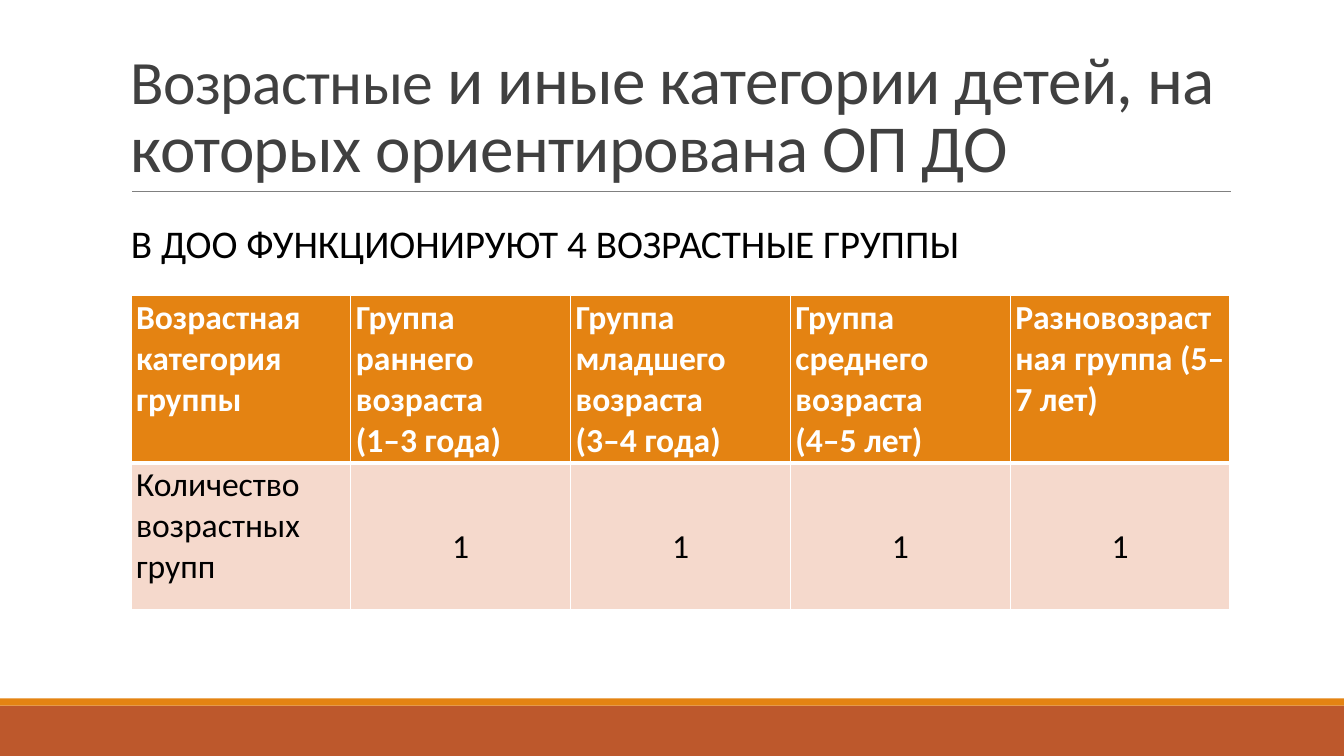
from dataclasses import dataclass

import pptx
import pptx.dml.color
import pptx.enum.shapes
import pptx.enum.text
import pptx.oxml.ns
import pptx.util
from lxml import etree

Inches = pptx.util.Inches
Pt = pptx.util.Pt
ALIGN = pptx.enum.text.PP_ALIGN
ANCHOR = pptx.enum.text.MSO_ANCHOR


@dataclass(frozen=True)
class Theme:
    font: str = "Calibri"
    orange: str = "E48312"
    rust: str = "BD582C"
    blush: str = "F5D9CC"
    gray: str = "808080"
    charcoal: str = "404040"
    black: str = "000000"
    white: str = "FFFFFF"
    title_size: int = 48
    title_lead_size: int = 44
    subtitle_size: int = 28
    table_size: int = 24


def color(value):
    return pptx.dml.color.RGBColor.from_string(value)


def add_xml(parent, tag, **attributes):
    return etree.SubElement(parent, pptx.oxml.ns.qn(tag), **attributes)


class SlideBuilder:
    def __init__(self, slide, theme):
        self.slide = slide
        self.theme = theme

    def format_run(self, run, size, fill, bold=False, spacing=0):
        run.font.name = self.theme.font
        run.font.size = Pt(size)
        run.font.bold = bold
        run.font.color.rgb = color(fill)
        if spacing:
            run._r.get_or_add_rPr().set("spc", str(round(spacing * 100)))

    def band(self, top, height, fill):
        shape = self.slide.shapes.add_shape(
            pptx.enum.shapes.MSO_SHAPE.RECTANGLE,
            0, Inches(top), Inches(13.33), Inches(height))
        shape.shadow.inherit = False
        shape.fill.solid()
        shape.fill.fore_color.rgb = color(fill)
        shape.line.fill.background()

    def rule(self, left, right, top):
        connector = self.slide.shapes.add_connector(
            pptx.enum.shapes.MSO_CONNECTOR.STRAIGHT,
            Inches(left), Inches(top), Inches(right), Inches(top))
        connector.line.color.rgb = color(self.theme.gray)
        connector.line.width = Pt(0.5)
        add_xml(connector._element.spPr, "a:effectLst")

    def text(self, left, top, width, height, runs, anchor, line_spacing, spacing=0):
        box = self.slide.shapes.add_textbox(
            Inches(left), Inches(top), Inches(width), Inches(height))
        frame = box.text_frame
        frame.word_wrap = True
        frame.vertical_anchor = anchor
        frame.margin_right = 0
        paragraph = frame.paragraphs[0]
        paragraph.line_spacing = line_spacing
        for content, size, fill in runs:
            run = paragraph.add_run()
            run.text = content
            self.format_run(run, size, fill, spacing=spacing)
        return paragraph

    def borders(self, cell, top, bottom):
        properties = cell._tc.get_or_add_tcPr()
        for side, width in (("L", 1), ("R", 1), ("T", top), ("B", bottom)):
            line = add_xml(properties, f"a:ln{side}", w=str(Pt(width)))
            fill = add_xml(line, "a:solidFill")
            add_xml(fill, "a:srgbClr", val=self.theme.white)

    def cell(self, cell, content, header, centered):
        theme = self.theme
        self.borders(cell, *((1, 3) if header else (3, 1)))
        cell.fill.solid()
        cell.fill.fore_color.rgb = color(theme.orange if header else theme.blush)
        cell.margin_left = cell.margin_right = Inches(0.05)
        cell.margin_top = cell.margin_bottom = Inches(0.02)
        cell.text_frame.text = content
        for paragraph in cell.text_frame.paragraphs:
            if centered:
                paragraph.alignment = ALIGN.CENTER
                paragraph.line_spacing = 2.5
            for run in paragraph.runs:
                self.format_run(run, theme.table_size,
                                theme.white if header else theme.black, bold=header)

    def table(self, left, top, column_width, row_heights, rows):
        columns = len(rows[0])
        table = self.slide.shapes.add_table(
            len(rows), columns, Inches(left), Inches(top),
            Inches(column_width * columns), Inches(sum(row_heights))).table
        for column in table.columns:
            column.width = Inches(column_width)
        for row_index, (height, values) in enumerate(zip(row_heights, rows)):
            table.rows[row_index].height = Inches(height)
            for column_index, content in enumerate(values):
                header = row_index == 0
                self.cell(table.cell(row_index, column_index), content,
                          header, not header and column_index > 0)


def main():
    theme = Theme()
    presentation = pptx.Presentation()
    presentation.slide_width = Inches(13.33)
    presentation.slide_height = Inches(7.5)
    slide = presentation.slides.add_slide(presentation.slide_layouts[6])
    builder = SlideBuilder(slide, theme)

    builder.band(7, 0.5, theme.rust)
    builder.band(6.93, 0.07, theme.orange)
    builder.rule(1.31, 12.21, 1.9)
    builder.text(
        1.2, 0.31, 11, 1.59,
        [("Возрастные", theme.title_lead_size, theme.charcoal),
         (" и иные категории детей, на которых ориентирована ОП ДО",
          theme.title_size, theme.charcoal)],
        ANCHOR.BOTTOM, 0.85, spacing=-0.5)
    subtitle = builder.text(
        1.2, 2.15, 9.15, 0.58,
        [("В ДОО ФУНКЦИОНИРУЮТ 4 ВОЗРАСТНЫЕ ГРУППЫ",
          theme.subtitle_size, theme.black)],
        ANCHOR.MIDDLE, 0.9)
    subtitle.space_before = Pt(12)
    subtitle.space_after = Pt(2)

    groups = [
        "Группа раннего возраста\n(1–3 года)",
        "Группа младшего возраста\n(3–4 года)",
        "Группа среднего возраста\n(4–5 лет)",
        "Разновозрастная группа (5–7 лет)",
    ]
    builder.table(1.3, 2.93, 2.18, [1.66, 1.46], [
        ["Возрастная категория группы", *groups],
        ["Количество возрастных групп", *["1"] * len(groups)],
    ])
    presentation.save("out.pptx")


if __name__ == "__main__":
    main()
